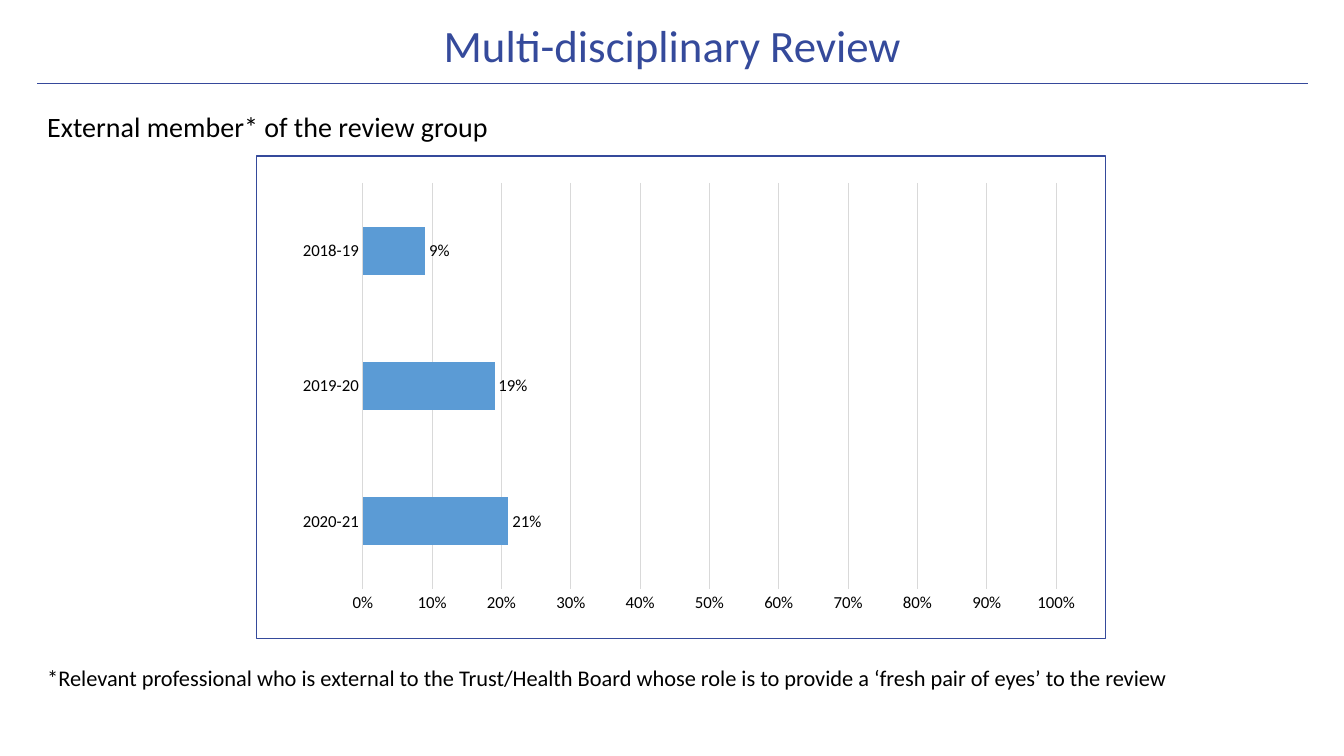
import pptx
import pptx.chart.data
import pptx.dml.color
import pptx.enum.chart
import pptx.enum.shapes
import pptx.enum.text
import pptx.oxml
import pptx.oxml.ns
import pptx.util
from pptx.util import Inches

COLORS = {"navy": "354A9B", "rule": "36499B", "bar": "5B9BD5",
          "grid": "D9D9D9", "text": "000000"}
FONT = "Calibri"


def rgb(name):
    return pptx.dml.color.RGBColor.from_string(COLORS[name])


def add_text(page, text, left, top, width, height, size, color="text",
             align=pptx.enum.text.PP_ALIGN.LEFT,
             anchor=pptx.enum.text.MSO_ANCHOR.TOP, spacing=1.0):
    box = page.shapes.add_textbox(Inches(left), Inches(top),
                                  Inches(width), Inches(height))
    frame = box.text_frame
    frame.word_wrap = True
    frame.vertical_anchor = anchor
    para = frame.paragraphs[0]
    para.alignment = align
    para.line_spacing = spacing
    span = para.add_run()
    span.text = text
    span.font.name = FONT
    span.font.size = pptx.util.Pt(size)
    span.font.color.rgb = rgb(color)


deck = pptx.Presentation()
deck.slide_width, deck.slide_height = Inches(13.33), Inches(7.5)
page = deck.slides.add_slide(deck.slide_layouts[6])

# Title and rule
rule = page.shapes.add_connector(pptx.enum.shapes.MSO_CONNECTOR.STRAIGHT,
                                 Inches(0.37), Inches(0.83), Inches(12.97), Inches(0.83))
rule.line.color.rgb = rgb("rule")
rule.line.width = pptx.util.Pt(0.5)
rule._element.spPr.append(pptx.oxml.parse_xml(
    f'<a:effectLst {pptx.oxml.ns.nsdecls("a")}/>'))
add_text(page, "Multi-disciplinary Review", 1.42, 0.16, 10.5, 0.63, 32, color="navy",
         align=pptx.enum.text.PP_ALIGN.CENTER,
         anchor=pptx.enum.text.MSO_ANCHOR.MIDDLE, spacing=0.9)

# Heading and footnote
add_text(page, "External member* of the review group", 0.37, 1.04, 12.6, 0.45, 20)
add_text(page, "*Relevant professional who is external to the Trust/Health Board whose "
         "role is to provide a ‘fresh pair of eyes’ to the review",
         0.37, 6.54, 12.6, 0.4, 16)

# Bar chart
data = pptx.chart.data.CategoryChartData(number_format="0%")
data.categories = ["2020-21", "2019-20", "2018-19"]
data.add_series("Series 1", [0.21, 0.19, 0.09])
chart = page.shapes.add_chart(pptx.enum.chart.XL_CHART_TYPE.BAR_CLUSTERED,
                              Inches(2.54), Inches(1.54), Inches(8.43), Inches(4.8),
                              data).chart
chart.has_title = False
chart.has_legend = False

plot = chart.plots[0]
plot.gap_width = 182
plot.vary_by_categories = False
plot.series[0].format.fill.solid()
plot.series[0].format.fill.fore_color.rgb = rgb("bar")
plot.has_data_labels = True
labels = plot.data_labels
labels.show_value = True
labels.position = pptx.enum.chart.XL_LABEL_POSITION.OUTSIDE_END
labels.number_format = "0%"
labels.number_format_is_linked = False

# Axes
years, shares = chart.category_axis, chart.value_axis
for axis in (years, shares):
    axis.major_tick_mark = pptx.enum.chart.XL_TICK_MARK.NONE
    axis.minor_tick_mark = pptx.enum.chart.XL_TICK_MARK.NONE
shares.minimum_scale, shares.maximum_scale, shares.major_unit = 0, 1, 0.1
shares.tick_labels.number_format = "0%"
shares.tick_labels.number_format_is_linked = False
shares.format.line.fill.background()
shares.has_major_gridlines = True
for line in (years.format.line, shares.major_gridlines.format.line):
    line.color.rgb = rgb("grid")
    line.width = pptx.util.Pt(0.75)

for font in (chart.font, labels.font, years.tick_labels.font, shares.tick_labels.font):
    font.name = FONT
    font.size = pptx.util.Pt(12)
    font.color.rgb = rgb("text")

# Plot position and chart border
space = chart._chartSpace
area = space.chart.plotArea
for layout in area.findall(pptx.oxml.ns.qn("c:layout")):
    area.remove(layout)
places = "".join(f'<c:{key} val="{value}"/>' for key, value in (
    ("layoutTarget", "inner"), ("xMode", "edge"), ("yMode", "edge"),
    ("x", 0.125), ("y", 0.056), ("w", 0.817), ("h", 0.842)))
area.insert(0, pptx.oxml.parse_xml(
    f'<c:layout {pptx.oxml.ns.nsdecls("c")}><c:manualLayout>{places}'
    '</c:manualLayout></c:layout>'))
space.chart.addnext(pptx.oxml.parse_xml(
    f'<c:spPr {pptx.oxml.ns.nsdecls("c", "a")}><a:noFill/><a:ln w="12700"><a:solidFill>'
    f'<a:srgbClr val="{COLORS["navy"]}"/></a:solidFill></a:ln></c:spPr>'))

deck.save("out.pptx")
